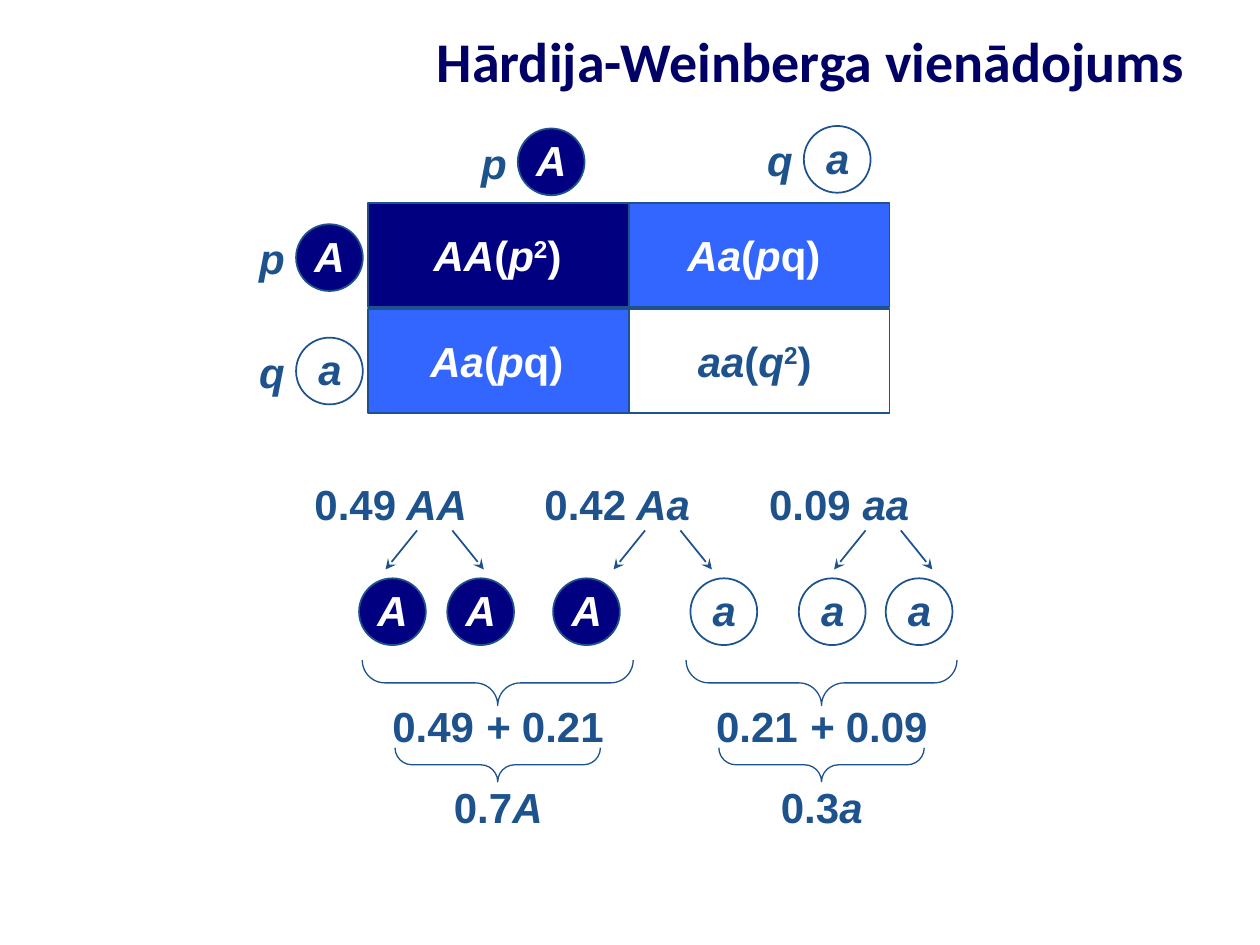
"""Build the Hardy-Weinberg equation slide."""
from lxml import etree
from pptx import Presentation
from pptx.dml.color import RGBColor
from pptx.enum import shapes as kinds, text as opts
from pptx.oxml.ns import qn
from pptx.util import Inches, Pt

WHITE = RGBColor(0xFF, 0xFF, 0xFF)
NAVY = RGBColor(0x00, 0x00, 0x80)
BLUE = RGBColor(0x33, 0x66, 0xFF)
STEEL = RGBColor(0x1D, 0x52, 0x8D)
TITLE = RGBColor(0x00, 0x00, 0x66)
SHAPE = kinds.MSO_SHAPE
SIZE = Inches(0.53)
TALL = Inches(0.5)


def draw(group, kind, x, y, wide, high, fill=None, width=1):
    """Add an outlined preset shape, filled if a colour is given."""
    shape = group.add_shape(kind, x, y, wide, high)
    shape.shadow.inherit = False
    shape.line.color.rgb = STEEL
    shape.line.width = Pt(width)
    if fill is None:
        shape.fill.background()
    else:
        shape.fill.solid()
        shape.fill.fore_color.rgb = fill
    return shape


def label(group, mid, y, wide, parts, color=STEEL):
    """Add text centred on mid; a part's style is i (italic), ^ (raised) or empty."""
    box = group.add_textbox(mid - wide // 2, y, wide, TALL)
    frame = box.text_frame
    frame.word_wrap = False
    frame.auto_size = opts.MSO_AUTO_SIZE.SHAPE_TO_FIT_TEXT
    para = frame.paragraphs[0]
    para.alignment = opts.PP_ALIGN.RIGHT
    font = para.font
    font.name, font.size, font.bold = "Arial", Pt(24), True
    font.color.rgb = color
    for words, style in parts:
        run = para.add_run()
        run.text = words
        run.font.italic = style == "i"
        if style == "^":
            run._r.get_or_add_rPr().set("baseline", "30000")


def allele(group, x, y, name, freq=None):
    """Draw an allele circle with an optional frequency letter on its left."""
    major = name == "A"
    draw(group, SHAPE.OVAL, x, y, SIZE, SIZE, NAVY if major else None)
    label(group, x + SIZE // 2, y, Inches(0.44 if major else 0.39),
          [(name, "i")], WHITE if major else STEEL)
    if freq:
        label(group, x - Inches(0.19), y + Inches(0.02), Inches(0.4), [(freq, "i")])


def arrow(group, x, y, dx, dy):
    """Draw a line with a stealth head at its end."""
    line = group.add_connector(kinds.MSO_CONNECTOR.STRAIGHT, x, y, x + dx, y + dy)
    line.line.color.rgb = STEEL
    line.line.width = Pt(1)
    etree.SubElement(line.line._get_or_add_ln(), qn("a:tailEnd"), type="stealth")
    etree.SubElement(line._element.spPr, qn("a:effectLst"))


def brace(group, mid, y, span, deep):
    """Draw a brace pointing down, centred on the point mid, y."""
    shape = draw(group, SHAPE.RIGHT_BRACE, mid - deep // 2, y - span // 2,
                 deep, span, width=0.75)
    shape.rotation = 90
    shape.adjustments[0] = shape.adjustments[1] = 0.5


def heading(slide, left, top, wide, high):
    """Place the slide title."""
    frame = slide.shapes.add_textbox(left, top, wide, high).text_frame
    frame.word_wrap = True
    frame.vertical_anchor = opts.MSO_ANCHOR.MIDDLE
    para = frame.paragraphs[0]
    para.text = "Hārdija-Weinberga vienādojums"
    para.alignment = opts.PP_ALIGN.RIGHT
    font = para.font
    font.name, font.size, font.bold = "Calibri", Pt(32), True
    font.color.rgb = TITLE


def square(slide, left, top):
    """Place the Punnett square with its alleles."""
    group = slide.shapes.add_group_shape().shapes
    mixed = [("Aa", "i"), ("(", ""), ("p", "i"), ("q)", "")]
    pure = [[(name, "i"), ("(", ""), (freq, "i"), ("2", "^"), (")", "")]
            for name, freq in (("AA", "p"), ("aa", "q"))]
    cells = [(0, 1, BLUE, 1.26, mixed), (1, 0, BLUE, 1.26, mixed),
             (0, 0, NAVY, 1.23, pure[0]), (1, 1, None, 1.12, pure[1])]
    for col, row, fill, wide, parts in cells:
        y = top + Inches(0.61 + 0.84 * row)
        draw(group, SHAPE.RECTANGLE, left + Inches(0.97 + 2.07 * col), y,
             Inches(2.07), Inches(0.83), fill)
        label(group, left + Inches(1.99 + 2.04 * col), y + Inches(0.16),
              Inches(wide), parts, WHITE if fill else STEEL)
    for x, y, name, freq in [(2.16, 0.02, "A", "p"), (4.43, 0, "a", "q"),
                             (0.4, 0.78, "A", "p"), (0.4, 1.68, "a", "q")]:
        allele(group, left + Inches(x), top + Inches(y), name, freq)


def tree(slide, left, top):
    """Place the genotypes, their alleles and the summed frequencies."""
    group = slide.shapes.add_group_shape().shapes
    for mid, wide, fork, share, name in [(0.72, 1.43, 1.08, "0.49", " AA"),
                                         (2.52, 1.37, 2.89, "0.42", " Aa"),
                                         (4.29, 1.31, 4.64, "0.09", " aa")]:
        label(group, left + Inches(mid), top, Inches(wide), [(share, ""), (name, "i")])
        for side in (-1, 1):
            arrow(group, left + Inches(fork + 0.14 * side), top + Inches(0.46),
                  Inches(0.25 * side), Inches(0.31))
    for x, name in zip((0.48, 1.18, 2.02, 3.11, 3.97, 4.66), "AAAaaa"):
        allele(group, left + Inches(x), top + Inches(0.84), name)
    for x, first, second, total, name, wide in [
            (1.58, "0.49", "0.21", "0.7", "A", 0.91),
            (4.15, "0.21", "0.09", "0.3", "a", 0.85)]:
        mid = left + Inches(x)
        brace(group, mid, top + Inches(1.67), Inches(2.15), Inches(0.36))
        label(group, mid, top + Inches(1.76), Inches(1.88),
              [(first, ""), (" + ", "i"), (second, "")])
        brace(group, mid, top + Inches(2.32), Inches(1.63), Inches(0.27))
        label(group, mid, top + Inches(2.4), Inches(wide), [(total, ""), (name, "i")])


def main():
    """Build and save the slide."""
    deck = Presentation()
    deck.slide_width, deck.slide_height = Inches(10), Inches(7.5)
    slide = deck.slides.add_slide(deck.slide_layouts[6])
    heading(slide, Inches(0.5), Inches(0.17), Inches(9), Inches(0.62))
    square(slide, Inches(1.95), Inches(1))
    tree(slide, Inches(2.37), Inches(3.75))
    deck.save("out.pptx")


if __name__ == "__main__":
    main()
